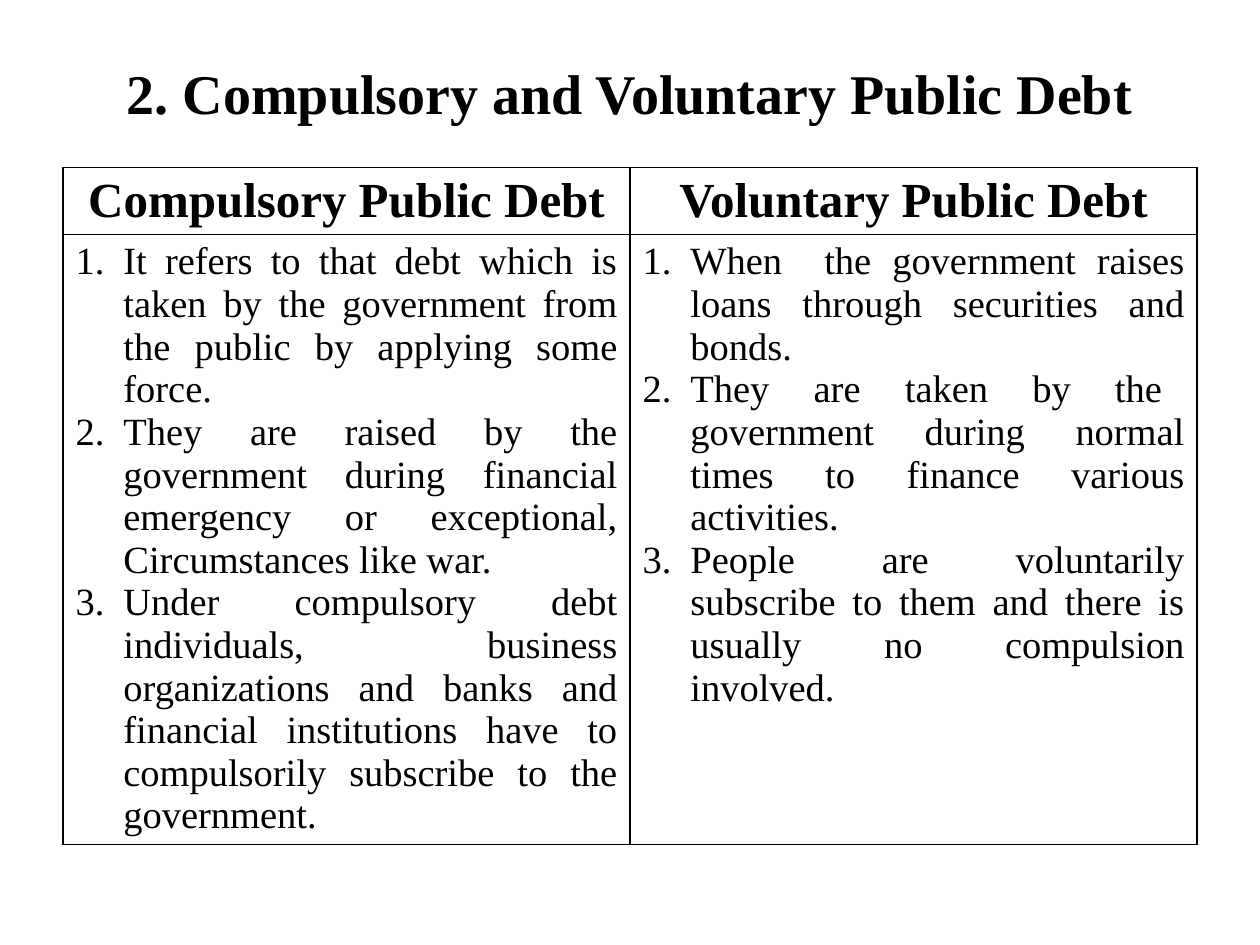
"""Build a slide comparing compulsory and voluntary public debt."""
from dataclasses import dataclass

from lxml import etree
from pptx import Presentation
from pptx.dml.color import RGBColor
from pptx.enum.text import MSO_ANCHOR, PP_ALIGN
from pptx.oxml.ns import qn
from pptx.util import Inches, Pt

CENTER, JUSTIFY = PP_ALIGN.CENTER, PP_ALIGN.JUSTIFY
MIDDLE, TOP = MSO_ANCHOR.MIDDLE, MSO_ANCHOR.TOP
TITLE_ONLY = 5


@dataclass(frozen=True)
class Theme:
    """Colours, font and type sizes of the slide."""
    font: str = "Times New Roman"
    ink: str = "000000"
    title: int = 32
    heading: int = 28
    body: int = 22
    border: float = 1
    indent: float = 0.38


THEME = Theme()
TITLE = "2. Compulsory and Voluntary Public Debt"
DEBT_KINDS = {
    "Compulsory Public Debt": [
        "It refers to that debt which is taken by the government from the "
        "public by applying some force.",
        "They are raised by the government during financial emergency or "
        "exceptional, Circumstances like war.",
        "Under compulsory debt individuals, business organizations and banks "
        "and financial institutions have to compulsorily subscribe to the "
        "government.",
    ],
    "Voluntary Public Debt": [
        "When  the government raises loans through securities and bonds.",
        "They  are  taken  by  the  government during normal times to finance "
        "various activities.",
        "People are voluntarily subscribe to them and there is usually no "
        "compulsion involved.",
    ],
}


def number_paragraph(paragraph):
    """Give a paragraph automatic numbering with a hanging indent."""
    properties = paragraph._p.get_or_add_pPr()
    indent = Inches(THEME.indent)
    properties.set("marL", str(indent))
    properties.set("indent", str(-indent))
    etree.SubElement(properties, qn("a:buFont"), typeface="+mj-lt")
    etree.SubElement(properties, qn("a:buAutoNum"), type="arabicPeriod")


def write_text(frame, lines, *, size, bold=False, align=CENTER, numbered=False):
    """Fill a text frame with one formatted paragraph per line."""
    frame.word_wrap = True
    for index, line in enumerate(lines):
        paragraph = frame.add_paragraph() if index else frame.paragraphs[0]
        paragraph.alignment = align
        if numbered:
            number_paragraph(paragraph)
        run = paragraph.add_run()
        run.text = line
        run.font.name = THEME.font
        run.font.size = Pt(size)
        run.font.bold = bold
        run.font.color.rgb = RGBColor.from_string(THEME.ink)


def border_cell(cell):
    """Clear the fill of a cell and rule all four of its sides."""
    cell.fill.background()
    properties = cell._tc.get_or_add_tcPr()
    for index, side in enumerate(("lnL", "lnR", "lnT", "lnB")):
        line = etree.Element(qn(f"a:{side}"), w=str(Pt(THEME.border)))
        fill = etree.SubElement(line, qn("a:solidFill"))
        etree.SubElement(fill, qn("a:srgbClr"), val=THEME.ink)
        properties.insert(index, line)


def add_title(slide):
    """Place and fill the title placeholder."""
    title = slide.shapes.title
    title.left, title.top = Inches(0.5), Inches(0.3)
    title.width, title.height = Inches(9), Inches(0.87)
    title.text_frame.vertical_anchor = MIDDLE
    write_text(title.text_frame, [TITLE], size=THEME.title, bold=True)


def add_comparison(slide):
    """Add the table with one column for each kind of debt."""
    heading_height, points_height = Inches(0.53), Inches(4.84)
    table = slide.shapes.add_table(
        2, len(DEBT_KINDS), Inches(0.5), Inches(1.33), Inches(9),
        heading_height + points_height).table
    table.first_row = table.horz_banding = False
    table.rows[0].height, table.rows[1].height = heading_height, points_height
    for column, (heading, points) in enumerate(DEBT_KINDS.items()):
        heading_cell, points_cell = table.cell(0, column), table.cell(1, column)
        heading_cell.vertical_anchor, points_cell.vertical_anchor = MIDDLE, TOP
        write_text(heading_cell.text_frame, [heading],
                   size=THEME.heading, bold=True)
        write_text(points_cell.text_frame, points,
                   size=THEME.body, align=JUSTIFY, numbered=True)
        border_cell(heading_cell)
        border_cell(points_cell)


def main():
    """Build and save the slide."""
    presentation = Presentation()
    presentation.slide_width, presentation.slide_height = Inches(10), Inches(7.5)
    slide = presentation.slides.add_slide(presentation.slide_layouts[TITLE_ONLY])
    add_title(slide)
    add_comparison(slide)
    presentation.save("out.pptx")


if __name__ == "__main__":
    main()
